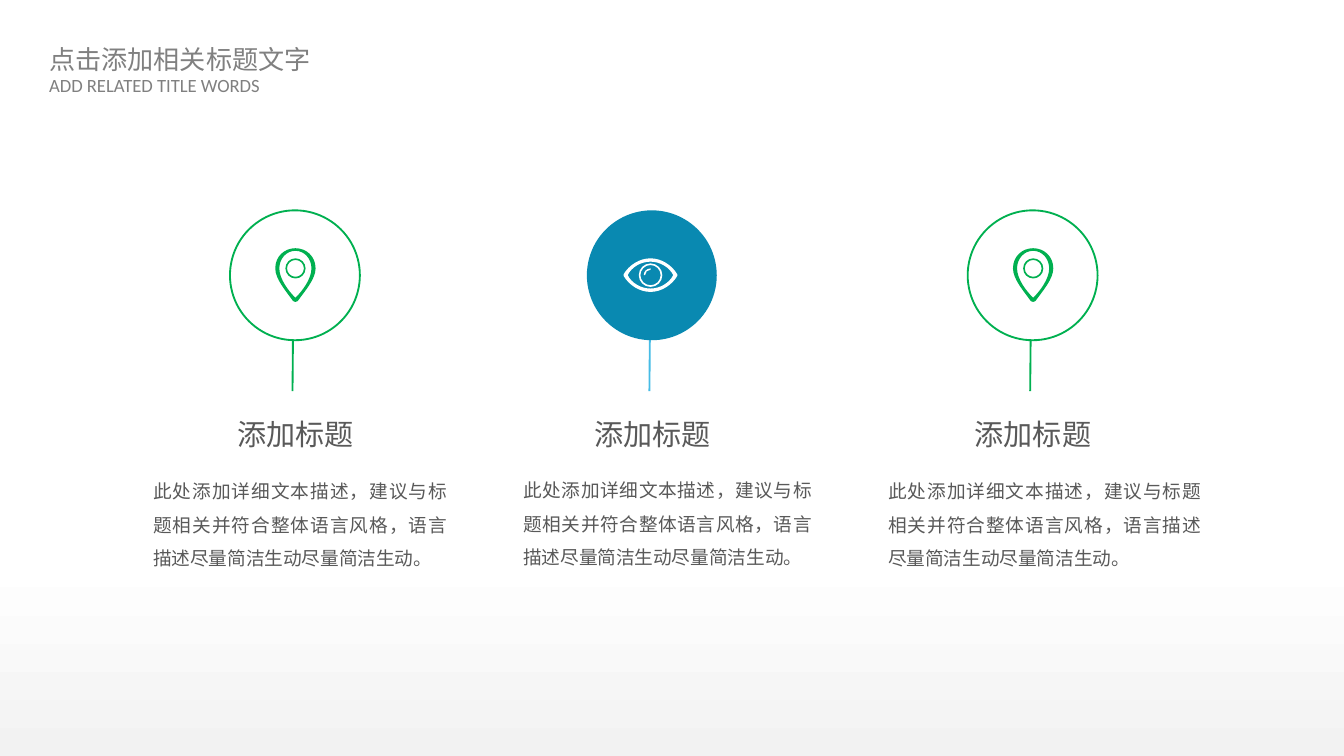
from collections import namedtuple

from lxml import etree
from pptx import Presentation
from pptx.dml.color import RGBColor
from pptx.enum.shapes import MSO_CONNECTOR, MSO_SHAPE
from pptx.enum.text import MSO_AUTO_SIZE as AutoSize, PP_ALIGN as Align
from pptx.oxml.ns import qn
from pptx.util import Pt

COLORS = {
    "white": "FFFFFF", "footer": "F2F2F2", "title": "808080", "text": "595959",
    "green": "00B050", "blue": "0989B1", "light_blue": "46BCE6",
}
CJK_FONT = "Noto Sans CJK SC"
LATIN_FONT = "Calibri"
SLIDE_WIDTH, SLIDE_HEIGHT = 720, 405
CIRCLE_SIZE = 69.6
CIRCLE_Y = 147.5

HEADING = "添加标题"
DESCRIPTION = "此处添加详细文本描述，建议与标题相关并符合整体语言风格，语言描述尽量简洁生动尽量简洁生动。"

Column = namedtuple("Column", "center body_left body_top body_width fill outline stem icon")

# Left halves of the icon outlines: a start point, then cubic curves, in points.
PIN_OUTER = [(0, -14.4),
             (-5.8, -14.4), (-10.8, -10.1), (-10.8, -3.6),
             (-10.8, 2.2), (-5, 8.6), (-1.4, 13.7),
             (-1.4, 13.7), (-0.7, 14.4), (0, 14.4)]
PIN_INNER = [(0, -13),
             (-5, -13), (-8.6, -8.6), (-8.6, -3.6),
             (-8.6, 2.2), (-3.6, 8.6), (0, 12.2)]
EYE_OUTER = [(0, -9),
             (-5.8, -9), (-11.5, -5.4), (-14.4, -0.4),
             (-14.6, -0.2), (-14.6, 0.2), (-14.4, 0.4),
             (-11.5, 5.4), (-5.8, 9), (0, 9)]
EYE_INNER = [(0, -7.2),
             (-5, -7.2), (-10.1, -4.3), (-12.2, 0),
             (-10.1, 4.3), (-5, 7.2), (0, 7.2)]
# The whole glint: an arc, a straight end and the arc back.
GLINT = [(0, -3.6),
         (-2, -3.6), (-3.6, -2), (-3.6, 0),
         (-3.6, 0), (-2.9, 0), (-2.9, 0),
         (-2.9, -1.6), (-1.6, -2.9), (0, -2.9)]


def rgb(name):
    return RGBColor.from_string(COLORS[name])


def style_shape(shape, fill, outline=None):
    shape.shadow.inherit = False
    shape.fill.solid()
    shape.fill.fore_color.rgb = rgb(fill)
    if outline:
        shape.line.color.rgb = rgb(outline)
        shape.line.width = Pt(1)
    else:
        shape.line.fill.background()


def add_background(slide):
    shape = slide.shapes.add_shape(MSO_SHAPE.RECTANGLE, 0, 0, Pt(SLIDE_WIDTH), Pt(SLIDE_HEIGHT))
    shape.shadow.inherit = False
    shape.line.fill.background()
    shape.fill.gradient()
    shape.fill.gradient_angle = 90
    for stop, position, color in zip(shape.fill.gradient_stops, (0, 0.26), ("footer", "white")):
        stop.position = position
        stop.color.rgb = rgb(color)


def add_text(slide, text, box, size, color, font=CJK_FONT, align=Align.LEFT,
             wrap=False, spacing=None, insets=(7.2, 3.6)):
    shape = slide.shapes.add_textbox(*map(Pt, box))
    frame = shape.text_frame
    frame.text = text
    frame.word_wrap = wrap
    frame.auto_size = AutoSize.SHAPE_TO_FIT_TEXT
    frame.margin_left = frame.margin_right = Pt(insets[0])
    frame.margin_top = frame.margin_bottom = Pt(insets[1])
    paragraph = frame.paragraphs[0]
    paragraph.alignment = align
    if spacing:
        paragraph.line_spacing = spacing
    run = paragraph.runs[0]
    run.font.size = Pt(size)
    run.font.name = font
    run.font.color.rgb = rgb(color)
    etree.SubElement(run.font._element, qn("a:ea"), typeface=font)


def add_circle(slide, x, y, size, fill, outline):
    shape = slide.shapes.add_shape(MSO_SHAPE.OVAL, Pt(x - size / 2), Pt(y - size / 2),
                                   Pt(size), Pt(size))
    style_shape(shape, fill, outline)


def add_stem(slide, x, color):
    line = slide.shapes.add_connector(MSO_CONNECTOR.STRAIGHT,
                                      Pt(x + 0.5), Pt(153.4), Pt(x), Pt(209.5))
    line.line.color.rgb = rgb(color)
    line.line.width = Pt(1)
    etree.SubElement(line._element.spPr, qn("a:effectLst"))


def mirrored(half):
    return half + [(-x, y) for x, y in reversed(half[:-1])]


def circle(radius, y=0):
    handle = radius * 0.55
    return mirrored([(0, y - radius),
                     (-handle, y - radius), (-radius, y - handle), (-radius, y),
                     (-radius, y + handle), (-handle, y + radius), (0, y + radius)])


def curve_segments(shape):
    """Turn every three straight segments of a freeform into one cubic curve."""
    segments = list(shape._element.iter(qn("a:lnTo")))
    for start in range(0, len(segments), 3):
        first, *others = segments[start:start + 3]
        curve = etree.Element(qn("a:cubicBezTo"))
        first.addprevious(curve)
        for segment in (first, *others):
            curve.append(segment[0])
            segment.getparent().remove(segment)


def add_outline(slide, x, y, contours, color):
    placed = [[(Pt(x + dx), Pt(y + dy)) for dx, dy in contour] for contour in contours]
    builder = slide.shapes.build_freeform(*placed[0][0], scale=1.0)
    for number, contour in enumerate(placed):
        if number:
            builder.move_to(*contour[0])
        builder.add_line_segments(contour[1:], close=True)
    shape = builder.convert_to_shape()
    curve_segments(shape)
    style_shape(shape, color)


def add_pin(slide, x, y):
    x += 0.3
    add_outline(slide, x, y, [circle(5.4, -3.6), circle(4.5, -3.6)], "green")
    add_outline(slide, x, y, [mirrored(PIN_OUTER), mirrored(PIN_INNER)], "green")


def add_eye(slide, x, y):
    x -= 0.7
    add_outline(slide, x, y, [mirrored(EYE_OUTER), mirrored(EYE_INNER)], "white")
    add_outline(slide, x, y, [GLINT], "white")
    add_outline(slide, x, y, [circle(6.3), circle(5.4)], "white")


def add_column(slide, column):
    add_text(slide, DESCRIPTION, (column.body_left, column.body_top, column.body_width, 62),
             10, "text", align=Align.JUSTIFY, wrap=True, spacing=1.5)
    add_text(slide, HEADING, (column.center - 38.7, 219.6, 77.8, 26), 15.6, "text",
             align=Align.CENTER)
    add_stem(slide, column.center - 1.3, column.stem)
    add_circle(slide, column.center, CIRCLE_Y, CIRCLE_SIZE, column.fill, column.outline)
    column.icon(slide, column.center, CIRCLE_Y - 0.1)


def main():
    presentation = Presentation()
    presentation.slide_width = Pt(SLIDE_WIDTH)
    presentation.slide_height = Pt(SLIDE_HEIGHT)
    slide = presentation.slides.add_slide(presentation.slide_layouts[6])
    add_background(slide)
    add_text(slide, "点击添加相关标题文字", (20.9, 20.6, 152, 22.3), 14, "title", insets=(5.4, 2.7))
    add_text(slide, "ADD RELATED TITLE WORDS", (20.9, 36.7, 126, 17.3), 10, "title",
             font=LATIN_FONT, insets=(5.4, 2.7))
    for column in (
        Column(349.2, 273.2, 247, 168.8, "blue", None, "light_blue", add_eye),
        Column(158, 74.9, 247.6, 171.8, "white", "green", "green", add_pin),
        Column(553.2, 468.7, 247.6, 181.8, "white", "green", "green", add_pin),
    ):
        add_column(slide, column)
    presentation.save("out.pptx")


if __name__ == "__main__":
    main()
